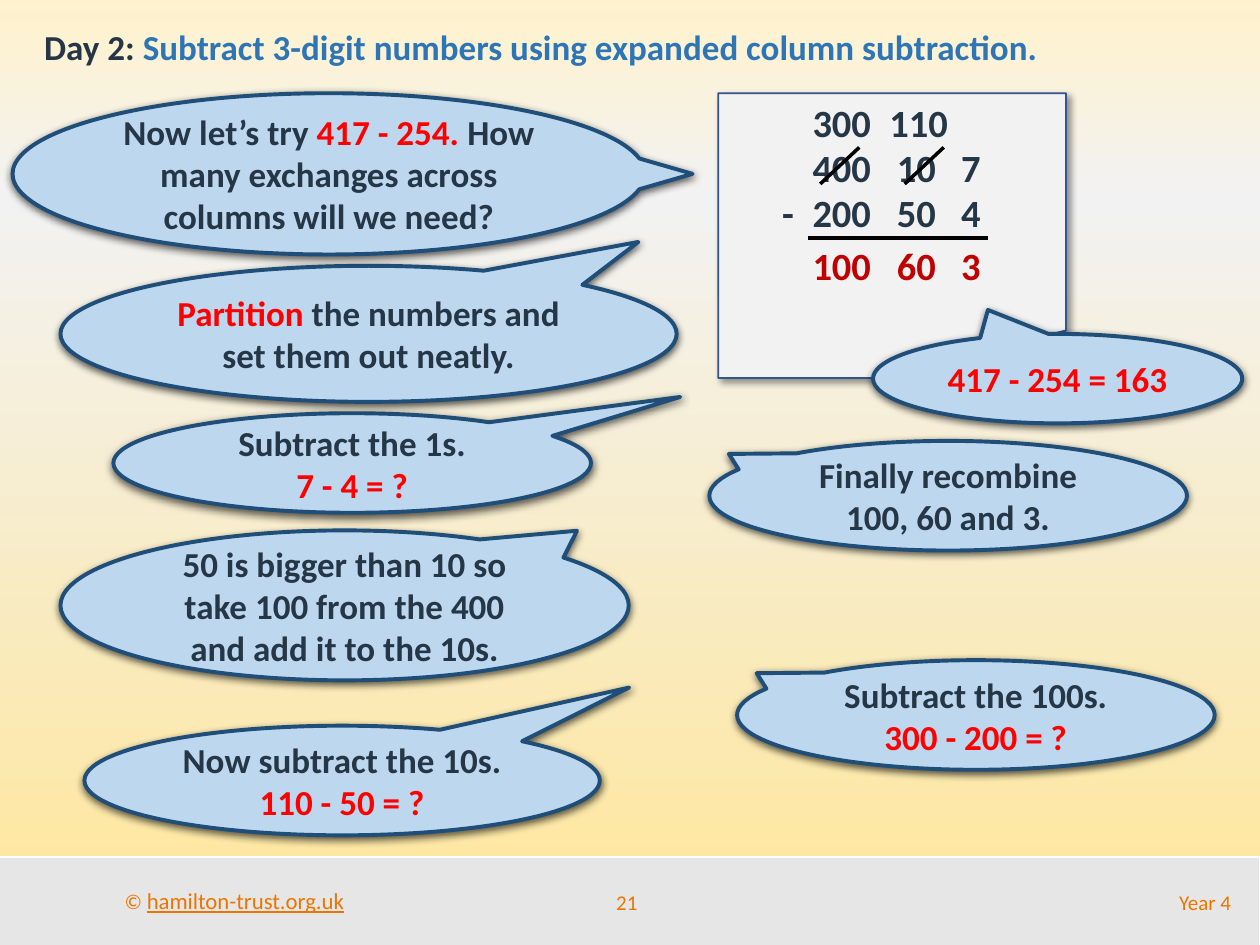
"""Build the Day 2 slide on expanded column subtraction."""
from lxml.etree import SubElement
from pptx import Presentation
from pptx.dml.color import RGBColor
from pptx.enum.shapes import MSO_CONNECTOR as Connector, MSO_SHAPE as Shape
from pptx.enum.text import MSO_ANCHOR as Anchor, MSO_AUTO_SIZE as AutoSize, PP_ALIGN as Align
from pptx.oxml.ns import qn
from pptx.util import Inches, Pt

NAVY, BLUE, RED, DARK_RED, ORANGE = "253746", "2E75B6", "FF0000", "C00000", "EA7600"
GRADIENT = [(0, "FFF2CC"), (21, "F2F2F2"), (100, "FFE699")]
TITLE = [("Day 2: ", NAVY), ("Subtract 3-digit numbers using expanded column subtraction.", BLUE)]

CARD = (5.7, 0.74, 2.76, 2.26)
COLUMNS = {"sign": 6.11, "hundreds": 6.35, "tens": 7.02, "exchanged tens": 6.96, "ones": 7.53}
ROWS = [
    (0.74, NAVY, {"hundreds": "300", "exchanged tens": "110"}),
    (1.09, NAVY, {"hundreds": "400", "tens": "10", "ones": "7"}),
    (1.45, NAVY, {"sign": "-", "hundreds": "200", "tens": "50", "ones": "4"}),
    (1.87, DARK_RED, {"hundreds": "100", "tens": "60", "ones": "3"}),
]
RULES = [(6.41, 1.89, 7.84, 1.89), (6.51, 1.46, 6.82, 1.17), (7.18, 1.46, 7.49, 1.17)]

CALLOUTS = [
    ((6.93, 2.65, 2.93, 0.71), (-0.189, -0.768), [[("417 - 254 = 163", RED)]]),
    ((0.9, 3.28, 3.79, 0.79), (0.687, -0.664), [[("Subtract the 1s.", NAVY)], [("7 - 4 = ?", RED)]]),
    ((0.48, 4.21, 4.51, 1.19), (0.409, -0.498),
     [[("50 is bigger than 10 so take 100 from the 400 and add it to the 10s.", NAVY)]]),
    ((0.67, 5.76, 4.09, 0.87), (0.557, -0.848),
     [[("Now subtract the 10s. ", NAVY), ("110 - 50 = ?", RED)]]),
    ((5.85, 5.24, 3.79, 0.87), (-0.459, -0.381),
     [[("Subtract the 100s. ", NAVY), ("300 - 200 = ?", RED)]]),
    ((0.48, 2.11, 4.89, 1.08), (0.438, -0.676),
     [[("Partition", RED), (" the numbers and set them out neatly.", NAVY)]]),
    ((5.63, 3.5, 3.79, 0.87), (-0.459, -0.381), [[("Finally recombine 100, 60 and 3.", NAVY)]]),
    ((0.1, 0.74, 5.02, 1.28), (0.575, 0),
     [[("Now let’s try ", NAVY), ("417 - 254. ", RED),
       ("How many exchanges across columns will we need?", NAVY)]]),
]

FOOTER_BAND = (-0.06, 6.8, 10.06, 0.72)
FOOTERS = [
    ((4.58, 6.96, 0.79, 0.4), "21", Align.CENTER),
    ((5.8, 6.96, 4.07, 0.4), "Year 4", Align.RIGHT),
]


def rgb(value):
    """Return the colour for a hex string."""
    return RGBColor.from_string(value)


def inches(values):
    """Convert a sequence of numbers to lengths."""
    return [Inches(value) for value in values]


def add_run(paragraph, text, color, **formats):
    """Add a Calibri run with the given font attributes."""
    run = paragraph.add_run()
    run.text = text
    run.font.color.rgb = rgb(color)
    for name, value in {"name": "Calibri", **formats}.items():
        setattr(run.font, name, value)


def write(shape, paragraphs, align=Align.LEFT, anchor=Anchor.TOP, wrap=True, **formats):
    """Fill a shape with paragraphs of (text, colour) runs."""
    frame = shape.text_frame
    settings = {"word_wrap": wrap, "vertical_anchor": anchor, "auto_size": AutoSize.NONE}
    for name, value in settings.items():
        setattr(frame, name, value)
    for index, runs in enumerate(paragraphs):
        paragraph = frame.add_paragraph() if index else frame.paragraphs[0]
        paragraph.alignment = align
        for text, color in runs:
            add_run(paragraph, text, color, **formats)


def add_shadow(shape, alpha, blur, distance, angle):
    """Give a shape a black outer shadow."""
    effects = shape._element.spPr.find(qn("a:effectLst"))
    shadow = SubElement(effects, qn("a:outerShdw"), blurRad=str(Pt(blur)), dist=str(Pt(distance)),
                        dir=str(angle * 60000), algn="tl", rotWithShape="0")
    color = SubElement(shadow, qn("a:srgbClr"), val="000000")
    SubElement(color, qn("a:alpha"), val=str(alpha * 1000))


def add_box(slide, kind, place, fill, line, width):
    """Add a filled and outlined preset shape without a shadow."""
    shape = slide.shapes.add_shape(kind, *inches(place))
    shape.shadow.inherit = False
    shape.fill.solid()
    shape.fill.fore_color.rgb = rgb(fill)
    shape.line.color.rgb = rgb(line)
    shape.line.width = Pt(width)
    return shape


def set_background(slide):
    """Fill the background with a top-to-bottom gradient."""
    fill = slide.background.fill
    fill.gradient()
    fill.gradient_angle = 270
    stops = slide._element.find(".//" + qn("a:gsLst"))
    for stop in list(stops):
        stops.remove(stop)
    for position, color in GRADIENT:
        stop = SubElement(stops, qn("a:gs"), pos=str(position * 1000))
        SubElement(stop, qn("a:srgbClr"), val=color)


def add_footer(slide):
    """Add the footer band and its three texts."""
    add_box(slide, Shape.RECTANGLE, FOOTER_BAND, "E7E6E6", "FFFFFF", 1)
    credit = slide.shapes.add_textbox(*inches((0.89, 6.99, 1.97, 0.32)))
    write(credit, [[("© ", ORANGE)]], wrap=False, size=Pt(12))
    add_run(credit.text_frame.paragraphs[0], "hamilton-trust.org.uk", ORANGE,
            size=Pt(13), underline=True)
    for place, text, align in FOOTERS:
        box = slide.shapes.add_textbox(*inches(place))
        write(box, [[(text, ORANGE)]], align, Anchor.MIDDLE, size=Pt(12))


def add_title(slide):
    """Place and format the title."""
    title = slide.shapes.title
    title.left, title.top, title.width, title.height = inches((0.25, 0.15, 9.61, 0.44))
    write(title, [TITLE], size=Pt(20), bold=True)


def add_calculation(slide):
    """Add the card with the column subtraction."""
    card = add_box(slide, Shape.FOLDED_CORNER, CARD, "F2F2F2", "325491", 1)
    add_shadow(card, 40, 4, 3, 45)
    for top, color, cells in ROWS:
        for column, text in cells.items():
            box = slide.shapes.add_textbox(*inches((COLUMNS[column], top, 0.75, 0.47)))
            write(box, [[(text, color)]], size=Pt(22), bold=True)
    for ends in RULES:
        rule = slide.shapes.add_connector(Connector.STRAIGHT, *inches(ends))
        rule.line.color.rgb = rgb("000000")
        rule.line.width = Pt(2)
        SubElement(rule._element.spPr, qn("a:effectLst"))


def add_callouts(slide):
    """Add the speech bubbles."""
    for place, tip, paragraphs in CALLOUTS:
        bubble = add_box(slide, Shape.OVAL_CALLOUT, place, "BDD7EE", "1F4E79", 2.25)
        bubble.adjustments[0], bubble.adjustments[1] = tip
        add_shadow(bubble, 63, 4.5, 1.5, 90)
        write(bubble, paragraphs, Align.CENTER, Anchor.MIDDLE, size=Pt(20), bold=True)


def main():
    """Build and save the presentation."""
    presentation = Presentation()
    presentation.slide_width, presentation.slide_height = inches((10, 7.5))
    slide = presentation.slides.add_slide(presentation.slide_layouts[5])
    for build in (set_background, add_footer, add_title, add_calculation, add_callouts):
        build(slide)
    presentation.save("out.pptx")


if __name__ == "__main__":
    main()
